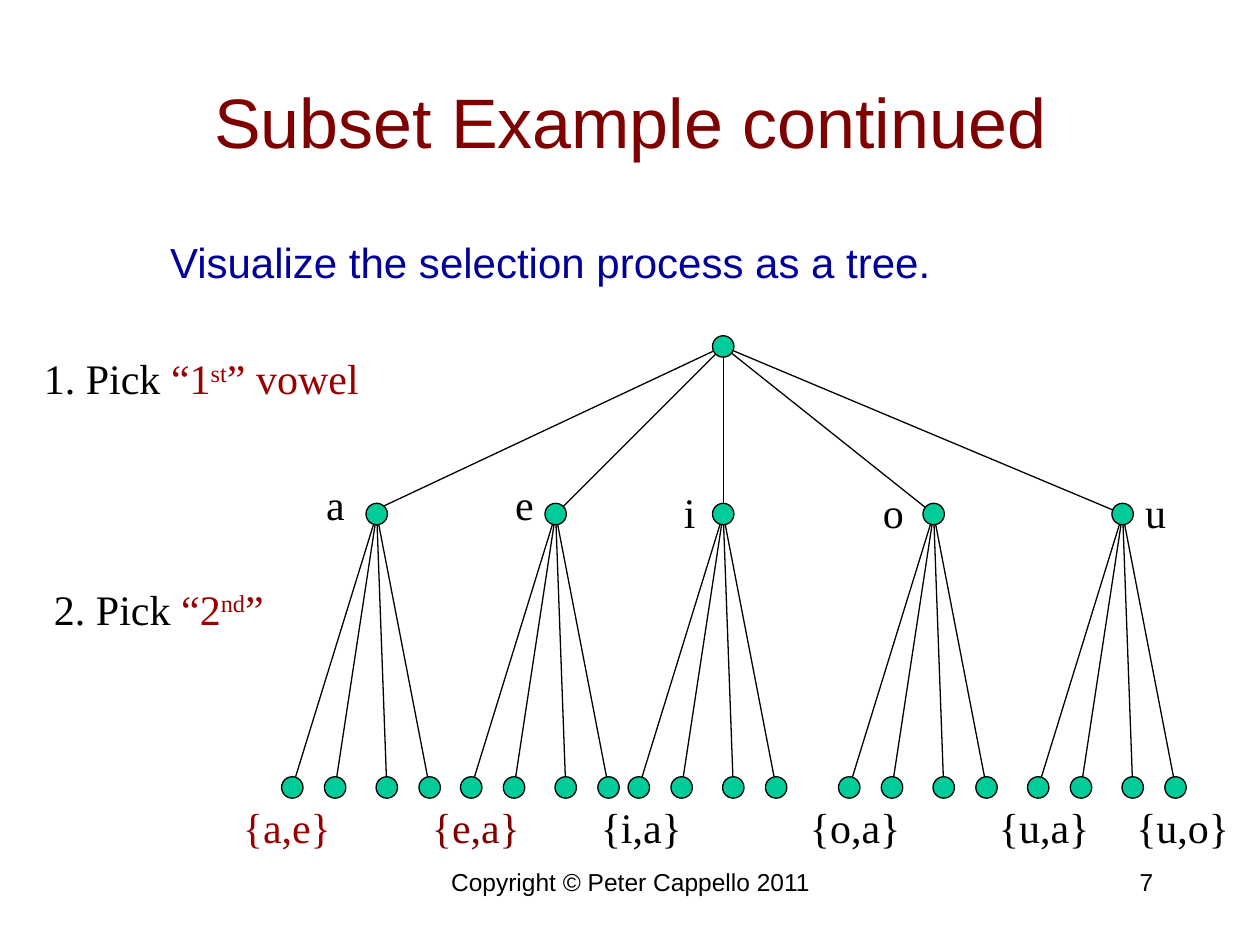
from lxml.etree import SubElement
from pptx import Presentation
from pptx.dml.color import RGBColor
from pptx.enum.shapes import MSO_CONNECTOR, MSO_SHAPE
from pptx.enum.text import MSO_ANCHOR, PP_ALIGN
from pptx.oxml.ns import qn
from pptx.util import Inches, Pt

BLACK = RGBColor(0x00, 0x00, 0x00)
MAROON = RGBColor(0x7F, 0x00, 0x00)
RED = RGBColor(0x99, 0x00, 0x00)
NAVY = RGBColor(0x00, 0x00, 0x99)
GREEN = RGBColor(0x00, 0xCC, 0x99)

NODE_SIZE = 0.17
ROOT_X, ROOT_Y = 5.74, 2.75
VOWEL_Y, LEAF_Y = 4.08, 6.25
LEAF_OFFSETS = (-0.67, -0.33, 0.08, 0.42)
SUBSET_WIDTH = 0.94

presentation = Presentation()
presentation.slide_width, presentation.slide_height = Inches(10), Inches(7.5)
slide = presentation.slides.add_slide(presentation.slide_layouts[5])


def add_text(text, left, top, width, height=0.5, *, holder=None, size=24,
             font="Times New Roman", color=BLACK, align=PP_ALIGN.LEFT,
             anchor=MSO_ANCHOR.TOP, wrap=False, indent=0, space_before=0):
    """Write a string, or a list of (text, colour, superscript) runs, in holder or a new box."""
    place = [Inches(length) for length in (left, top, width, height)]
    holder = holder or slide.shapes.add_textbox(*place)
    holder.left, holder.top, holder.width, holder.height = place
    frame = holder.text_frame
    frame.word_wrap = wrap
    frame.vertical_anchor = anchor
    frame.margin_left = Inches(0.1 + indent)
    paragraph = frame.paragraphs[0]
    paragraph.alignment = align
    paragraph.space_before = Pt(space_before)
    runs = [(text, color, False)] if isinstance(text, str) else text
    for words, run_color, superscript in runs:
        run = paragraph.add_run()
        run.text = words
        run.font.name = font
        run.font.size = Pt(size)
        run.font.color.rgb = run_color
        if superscript:
            run._r.get_or_add_rPr().set("baseline", "30000")


add_text("Subset Example continued", 0.75, 0.33, 8.5, 1.25, holder=slide.shapes.title,
         size=40, font="Arial", color=MAROON, align=PP_ALIGN.CENTER,
         anchor=MSO_ANCHOR.MIDDLE, wrap=True)
add_text("Visualize the selection process as a tree.", 0.75, 1.83, 8.5, 4.83,
         font="Arial", color=NAVY, wrap=True, indent=0.5, space_before=4.8)
add_text("Copyright © Peter Cappello 2011", 3.42, 6.83, 3.17,
         size=14, font="Arial", align=PP_ALIGN.CENTER, wrap=True)
add_text("7", 7.17, 6.83, 2.08, size=14, font="Arial", align=PP_ALIGN.RIGHT, wrap=True)

# Vowel, node x, end x of its branch, label left, label top, label width
vowels = [
    ("a", 2.99, 2.91, 2.49, 3.75, 0.37),
    ("e", 4.41, 4.41, 3.99, 3.75, 0.37),
    ("i", 5.74, 5.74, 5.33, 3.81, 0.29),
    ("o", 7.41, 7.41, 6.91, 3.81, 0.37),
    ("u", 8.91, 8.91, 8.99, 3.81, 0.37),
]

nodes = [(ROOT_X, ROOT_Y)]
branches = []
for vowel, vowel_x, branch_x, label_x, label_y, label_width in vowels:
    nodes.append((vowel_x, VOWEL_Y))
    branches.append((ROOT_X, ROOT_Y, branch_x, VOWEL_Y))
    for offset in LEAF_OFFSETS:
        nodes.append((vowel_x + offset, LEAF_Y))
        branches.append((vowel_x, VOWEL_Y, vowel_x + offset, LEAF_Y))
    add_text(vowel, label_x, label_y, label_width)

for ends in branches:
    branch = slide.shapes.add_connector(MSO_CONNECTOR.STRAIGHT, *map(Inches, ends))
    branch.line.color.rgb = BLACK
    branch.line.width = Pt(0.75)
    SubElement(branch.element.spPr, qn("a:effectLst"))

for x, y in nodes:
    node = slide.shapes.add_shape(
        MSO_SHAPE.OVAL, Inches(x - NODE_SIZE / 2), Inches(y - NODE_SIZE / 2),
        Inches(NODE_SIZE), Inches(NODE_SIZE))
    node.shadow.inherit = False
    node.fill.solid()
    node.fill.fore_color.rgb = GREEN
    node.line.color.rgb = BLACK
    node.line.width = Pt(0.75)

subsets = [
    ("{a,e}", 1.83, RED),
    ("{e,a}", 3.33, MAROON),
    ("{i,a}", 4.67, BLACK),
    ("{o,a}", 6.33, BLACK),
    ("{u,a}", 7.83, BLACK),
    ("{u,o}", 8.92, BLACK),
]
for subset, left, color in subsets:
    add_text(subset, left, 6.31, SUBSET_WIDTH, color=color)

add_text([("1. Pick ", BLACK, False), ("“1", RED, False), ("st", RED, True),
          ("” vowel", RED, False)], 0.25, 2.75, 2.72)
add_text([("2. Pick ", BLACK, False), ("“2", RED, False), ("nd", RED, True),
          ("”", RED, False)], 0.33, 4.58, 1.89)

presentation.save("out.pptx")
